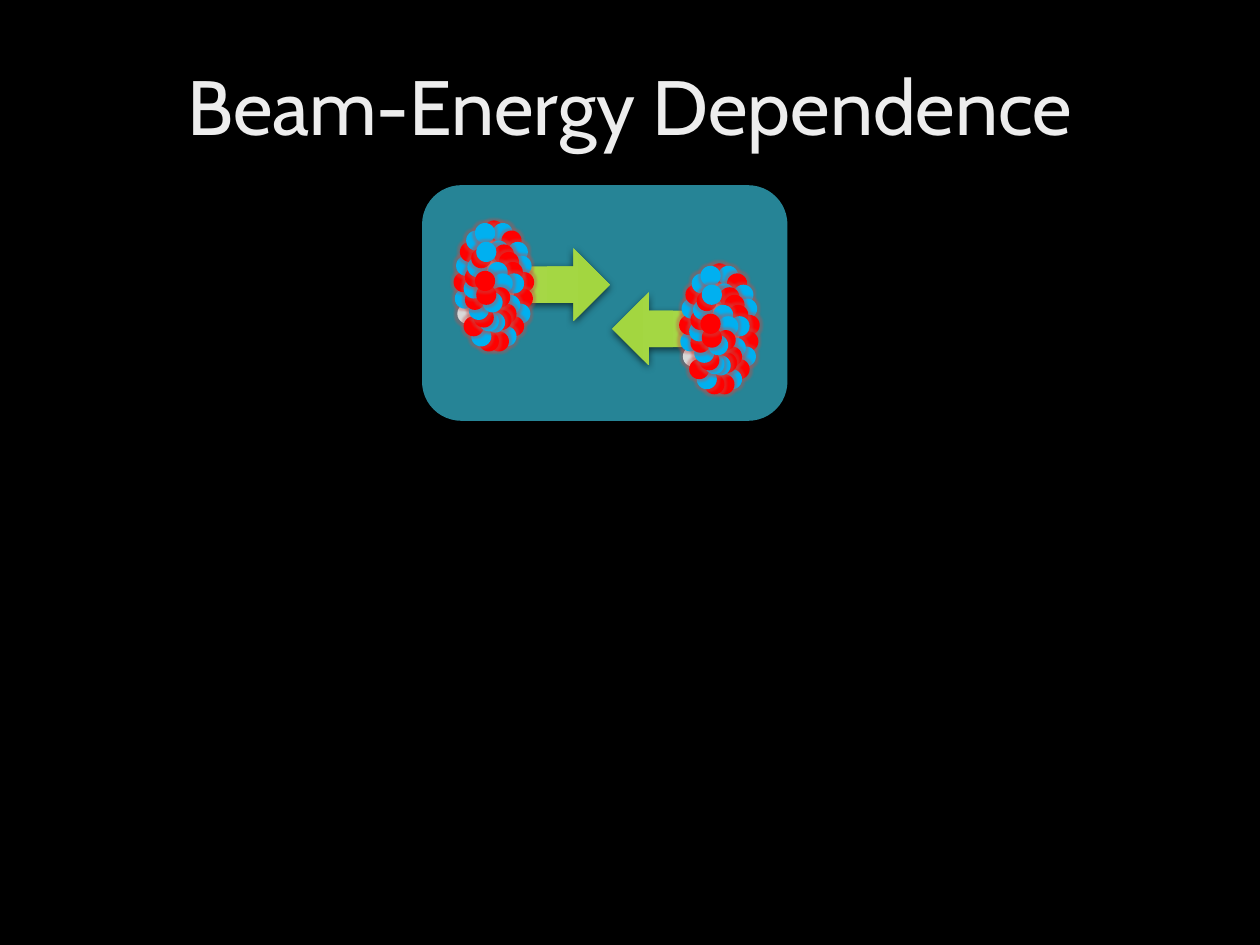
import math
from dataclasses import dataclass
from typing import Iterator, NamedTuple

from lxml import etree
from pptx import Presentation
from pptx import util as u
from pptx.dml.color import RGBColor
from pptx.enum import shapes, text
from pptx.oxml.ns import qn

EMU_PER_PX = 9144  # 100 px to the inch


@dataclass(frozen=True)
class Theme:
    background: str = "000000"
    panel: str = "268496"
    arrow_start: str = "A6D746"
    arrow_end: str = "A3D640"
    shadow: str = "000000"
    glow: str = "C0504D"
    proton: str = "FF0000"
    neutron: str = "00B0F0"
    hidden_nucleon: str = "D9D9D9"
    title: str = "EDEDED"
    title_font: str = "Cabin"
    title_pt: int = 44


class Box(NamedTuple):
    left: int
    top: int
    width: int
    height: int


class Arrow(NamedTuple):
    box: Box
    flipped: bool


class Ring(NamedTuple):
    """Nucleons spread evenly, clockwise from start degrees past the top."""
    scale: float  # share of the nucleus radius
    start: int
    kinds: str    # one letter per nucleon


class Nucleon(NamedTuple):
    kind: str
    box: Box


THEME = Theme()
KIND_COLORS = {"P": THEME.proton, "N": THEME.neutron,
               "H": THEME.hidden_nucleon}
NUCLEON_SIZE = 16

TITLE_BOX = Box(69, 15, 862, 145)
PANEL_BOX = Box(335, 147, 290, 187)
ARROWS = (
    Arrow(Box(486, 232, 72, 58), flipped=True),
    Arrow(Box(409, 197, 75, 58), flipped=False),
)
NUCLEI = (Box(539, 209, 64, 104), Box(360, 175, 64, 104))

# Outer ring at the back, inner ring in front
RINGS = (
    Ring(1.0, 0, "PNPNNPPNPNPPNPHNPNPNN"),
    Ring(0.66, 14, "NPPPNHNPPNNPNPNPNPNH"),
    Ring(0.29, 30, "NNPNPPH"),
)


def emu(box: Box) -> list[u.Emu]:
    return [u.Emu(v * EMU_PER_PX) for v in box]


def rgb(color: str) -> RGBColor:
    return RGBColor.from_string(color)


def set_format(target, **values) -> None:
    for name, value in values.items():
        setattr(target, name, value)


def add_effect(sp, tag: str, color: str, alpha: int, **attrs: int) -> None:
    """Put one glow or shadow effect on a shape; alpha is in percent."""
    effects = sp._element.spPr.find(qn("a:effectLst"))
    effect = etree.SubElement(effects, qn(tag),
                              {k: str(v) for k, v in attrs.items()})
    clr = etree.SubElement(effect, qn("a:srgbClr"), val=color)
    etree.SubElement(clr, qn("a:alpha"), val=str(alpha * 1000))


def add_plain_shape(s, kind: shapes.MSO_SHAPE, box: Box, color: str):
    sp = s.shapes.add_shape(kind, *emu(box))
    sp.shadow.inherit = False
    sp.line.fill.background()
    sp.fill.solid()
    sp.fill.fore_color.rgb = rgb(color)
    return sp


def add_arrow(s, arrow: Arrow) -> None:
    sp = add_plain_shape(s, shapes.MSO_SHAPE.RIGHT_ARROW, arrow.box,
                         THEME.arrow_start)
    sp.fill.gradient()
    sp.fill.gradient_angle = 0
    colors = (THEME.arrow_start, THEME.arrow_end)
    for stop, color in zip(sp.fill.gradient_stops, colors):
        stop.color.rgb = rgb(color)
    if arrow.flipped:
        sp._element.spPr.find(qn("a:xfrm")).set("flipH", "1")
    add_effect(sp, "a:outerShdw", THEME.shadow, 63, blurRad=u.Pt(4.5),
               dist=u.Pt(1.5), dir=5400000, rotWithShape=0)


def ring_nucleons(nucleus: Box, ring: Ring) -> Iterator[Nucleon]:
    """Place one ring's nucleons on an ellipse inside the nucleus."""
    radius_x = (nucleus.width - NUCLEON_SIZE) / 2
    radius_y = (nucleus.height - NUCLEON_SIZE) / 2
    step = 360 / len(ring.kinds)
    for i, kind in enumerate(ring.kinds):
        angle = math.radians(ring.start + i * step)
        x = radius_x * (1 + ring.scale * math.sin(angle))
        y = radius_y * (1 - ring.scale * math.cos(angle))
        yield Nucleon(kind, Box(nucleus.left + round(x),
                                nucleus.top + round(y),
                                NUCLEON_SIZE, NUCLEON_SIZE))


def add_nucleus(s, nucleus: Box) -> None:
    nucleons = [n for ring in RINGS for n in ring_nucleons(nucleus, ring)]
    # A stable sort: hidden nucleons go behind, the rest keep ring order
    for n in sorted(nucleons, key=lambda n: n.kind != "H"):
        sp = add_plain_shape(s, shapes.MSO_SHAPE.OVAL, n.box,
                             KIND_COLORS[n.kind])
        add_effect(sp, "a:glow", THEME.glow, 40, rad=u.Pt(2.5))


def add_title(s, title: str) -> None:
    tf = s.shapes.add_textbox(*emu(TITLE_BOX)).text_frame
    set_format(tf, word_wrap=True, vertical_anchor=text.MSO_ANCHOR.MIDDLE)
    p = tf.paragraphs[0]
    set_format(p, alignment=text.PP_ALIGN.CENTER, line_spacing=0.9)
    r = p.add_run()
    r.text = title
    set_format(r.font, name=THEME.title_font, size=u.Pt(THEME.title_pt))
    r.font.color.rgb = rgb(THEME.title)


def main() -> None:
    prs = Presentation()
    set_format(prs, slide_width=u.Inches(10), slide_height=u.Inches(7.5))
    s = prs.slides.add_slide(prs.slide_layouts[6])
    s.background.fill.solid()
    s.background.fill.fore_color.rgb = rgb(THEME.background)

    add_plain_shape(s, shapes.MSO_SHAPE.ROUNDED_RECTANGLE, PANEL_BOX,
                    THEME.panel)
    for arrow in ARROWS:
        add_arrow(s, arrow)
    add_title(s, "Beam-Energy Dependence")
    for nucleus in NUCLEI:
        add_nucleus(s, nucleus)
    prs.save("out.pptx")


if __name__ == "__main__":
    main()
